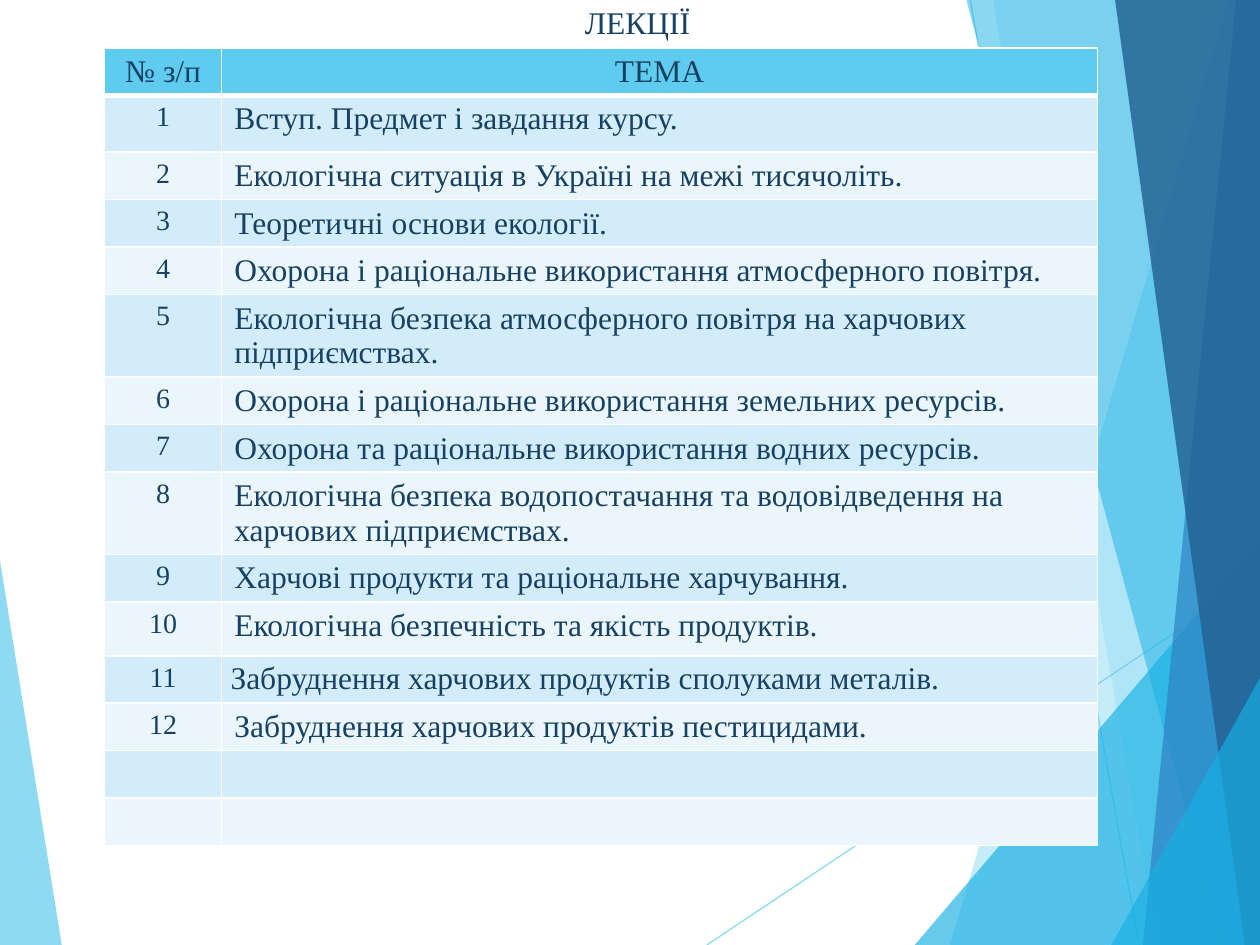
from dataclasses import dataclass

from lxml.etree import SubElement
from pptx import Presentation
from pptx.dml.color import RGBColor as Rgb
from pptx.enum.text import MSO_ANCHOR as Anchor, PP_ALIGN as Align
from pptx.oxml.ns import qn
from pptx.util import Inches, Pt

TITLE = "ЛЕКЦІЇ"
HEADINGS = ("№ з/п", "ТЕМА")
TOPICS = [
    "Вступ. Предмет і завдання курсу.",
    "Екологічна ситуація в Україні на межі тисячоліть.",
    "Теоретичні основи екології.",
    "Охорона і раціональне використання атмосферного повітря.",
    "Екологічна безпека атмосферного повітря на харчових підприємствах.",
    "Охорона і раціональне використання земельних ресурсів.",
    "Охорона та раціональне використання водних ресурсів.",
    "Екологічна безпека водопостачання та водовідведення на харчових підприємствах.",
    "Харчові продукти та раціональне харчування.",
    "Екологічна безпечність та якість продуктів.",
    "Забруднення харчових продуктів сполуками металів.",
    "Забруднення харчових продуктів пестицидами.",
]
SPARE_ROWS = 2
LOOSE_TOPIC = 11  # the one topic set with wider line spacing and no vertical margins


@dataclass(frozen=True)
class Theme:
    font: str = "Times New Roman"
    ink: str = "174162"
    header: str = "5FCBEF"
    bands: tuple = ("EAF6FC", "D2ECF9")
    rule: str = "FFFFFF"
    sky: str = "5FCBEF"
    cyan: str = "17B0E4"
    blue: str = "2E83C3"
    navy: str = "226292"
    body: int = 18
    number: int = 16


THEME = Theme()
WIDTH, HEIGHT = 10, 7.5
TABLE_LEFT, TABLE_TOP = 0.83, 0.38
COLUMNS = (0.93, 6.95)
ROW = 0.37
TALL_ROWS = {1: 0.45, 5: 0.65, 8: 0.65, 10: 0.43}

# Facets: colour, opacity in percent, corners
LEFT_FACET = (THEME.sky, 70, [(0, 4.45), (0.49, HEIGHT), (0, HEIGHT)])
RIGHT_FACETS = [
    (THEME.sky, 36, [(9.75, 0), (7.54, HEIGHT), (WIDTH, HEIGHT), (WIDTH, 0)]),
    (THEME.sky, 20, [(7.88, 0), (9.19, HEIGHT), (WIDTH, HEIGHT), (WIDTH, 0)]),
    (THEME.cyan, 66, [(7.26, HEIGHT), (WIDTH, 4.29), (WIDTH, HEIGHT)]),
    (THEME.cyan, 50, [(7.67, 0), (9.7, HEIGHT), (WIDTH, HEIGHT), (WIDTH, 0)]),
    (THEME.blue, 70, [(9.81, 0), (9.07, HEIGHT), (WIDTH, HEIGHT), (WIDTH, 0)]),
    (THEME.navy, 82, [(8.85, 0), (9.88, HEIGHT), (WIDTH, HEIGHT), (WIDTH, 0)]),
    (THEME.cyan, 66, [(8.82, HEIGHT), (WIDTH, 5.38), (WIDTH, HEIGHT)]),
]
RAYS = [((5.61, HEIGHT), (WIDTH, 4.57)), ((7.7, 0), (9.04, HEIGHT))]


def paint(fill, colour, opacity=100):
    fill.solid()
    fill.fore_color.rgb = Rgb.from_string(colour)
    if opacity < 100:
        colour_element = fill._xPr.find(qn("a:solidFill"))[0]
        SubElement(colour_element, qn("a:alpha"), val=str(opacity * 1000))


def write(frame, text, size=THEME.body, align=Align.CENTER):
    paragraph = frame.paragraphs[0]
    paragraph.text = text
    paragraph.alignment = align
    font = paragraph.font
    font.name, font.size, font.bold = THEME.font, Pt(size), False
    font.color.rgb = Rgb.from_string(THEME.ink)
    return paragraph


def add_facet(shapes, colour, opacity, corners):
    start, *others = [(Inches(x), Inches(y)) for x, y in corners]
    builder = shapes.build_freeform(*start)
    builder.add_line_segments(others, close=True)
    facet = builder.convert_to_shape()
    facet.shadow.inherit = False
    facet.line.fill.background()
    paint(facet.fill, colour, opacity)


def add_ray(shapes, start, end):
    ray = shapes.add_connector(1, *(Inches(v) for v in start + end))
    ray.line.width = Pt(0.75)
    paint(ray.line.fill, THEME.sky, 70)
    SubElement(ray._element.spPr, qn("a:effectLst"))


def style_cell(cell, colour, bottom_rule=1, top_rule=1):
    """Borders go in before the fill, as the schema orders them."""
    properties = cell._tc.get_or_add_tcPr()
    for side, width in (("L", 1), ("R", 1), ("T", top_rule), ("B", bottom_rule)):
        border = SubElement(properties, qn(f"a:ln{side}"), w=str(Pt(width)))
        fill = SubElement(border, qn("a:solidFill"))
        SubElement(fill, qn("a:srgbClr"), val=THEME.rule)
    paint(cell.fill, colour)


def add_lecture_table(shapes):
    entries = [HEADINGS]
    entries += [(str(n), topic) for n, topic in enumerate(TOPICS, 1)]
    entries += [("", "")] * SPARE_ROWS
    heights = [TALL_ROWS.get(i, ROW) for i in range(len(entries))]
    table = shapes.add_table(
        len(entries), len(COLUMNS), Inches(TABLE_LEFT), Inches(TABLE_TOP),
        Inches(sum(COLUMNS)), Inches(sum(heights))).table
    for column, width in zip(table.columns, COLUMNS):
        column.width = Inches(width)

    for i, (number, topic) in enumerate(entries):
        table.rows[i].height = Inches(heights[i])
        number_cell, topic_cell = table.cell(i, 0), table.cell(i, 1)
        is_header = i == 0
        for cell in (number_cell, topic_cell):
            style_cell(cell, THEME.header if is_header else THEME.bands[i % 2],
                       bottom_rule=3 if is_header else 1,
                       top_rule=3 if i == 1 else 1)
        write(number_cell.text_frame, number,
              THEME.body if is_header else THEME.number)
        paragraph = write(topic_cell.text_frame, topic,
                          align=Align.CENTER if is_header else Align.LEFT)
        if i == LOOSE_TOPIC:
            paragraph.line_spacing = 1.15
            topic_cell.margin_left = topic_cell.margin_right = Inches(0.07)
            topic_cell.margin_top = topic_cell.margin_bottom = 0


def place_title(title):
    title.left, title.top = Inches(2.55), Inches(-0.03)
    title.width, title.height = Inches(5.02), Inches(0.4)
    title.text_frame.vertical_anchor = Anchor.TOP
    write(title.text_frame, TITLE)


def main():
    deck = Presentation()
    deck.slide_width, deck.slide_height = Inches(WIDTH), Inches(HEIGHT)
    slide = deck.slides.add_slide(deck.slide_layouts[5])
    shapes = slide.shapes
    place_title(shapes.title)
    add_facet(shapes, *LEFT_FACET)
    for start, end in RAYS:
        add_ray(shapes, start, end)
    for facet in RIGHT_FACETS:
        add_facet(shapes, *facet)
    add_lecture_table(shapes)
    deck.save("out.pptx")


if __name__ == "__main__":
    main()
